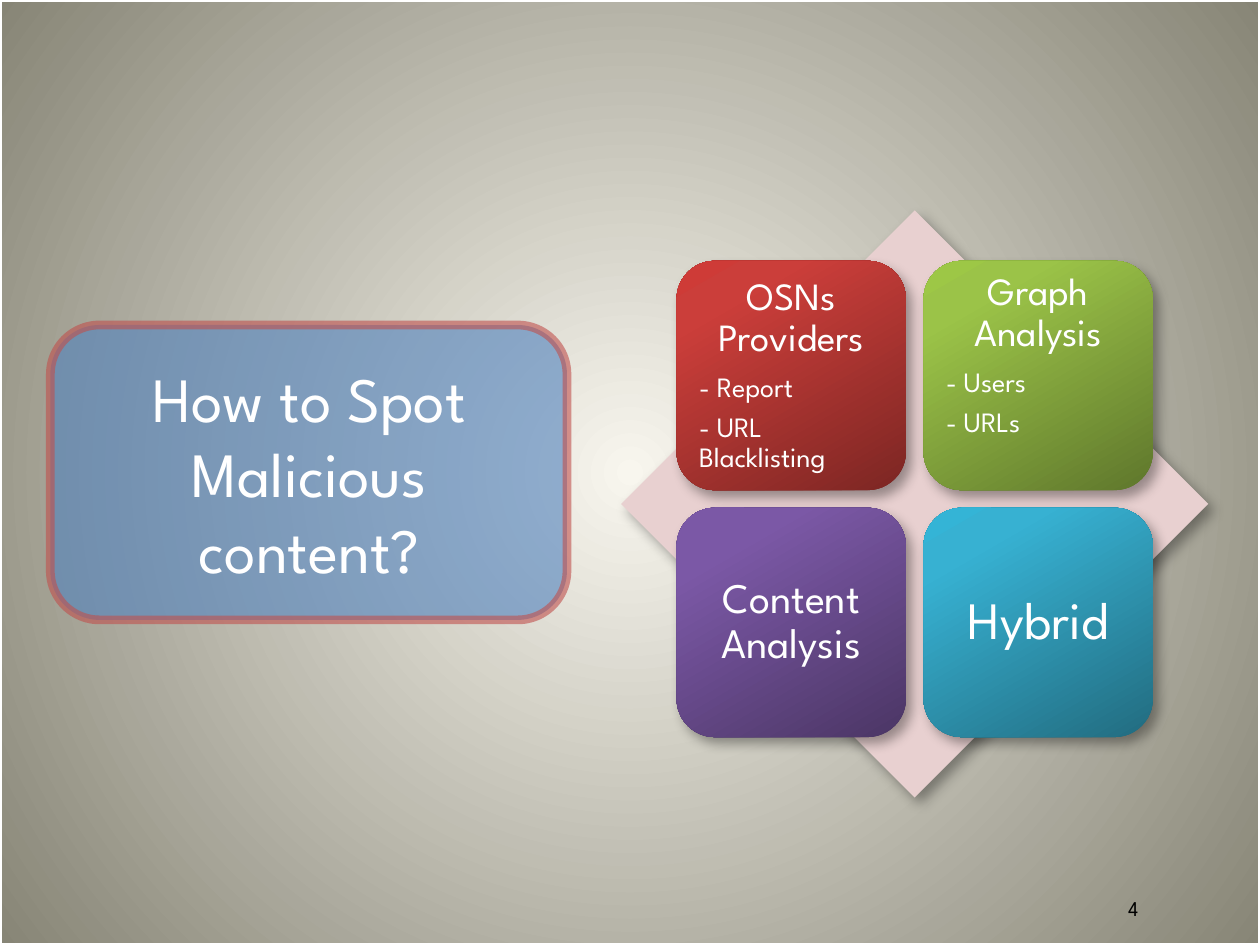
from pptx import Presentation
from pptx.dml.color import RGBColor
from pptx.enum.shapes import MSO_SHAPE
from pptx.enum.text import MSO_ANCHOR, MSO_AUTO_SIZE, PP_ALIGN
from pptx.oxml.ns import qn
from pptx.util import Inches, Pt
from lxml.etree import SubElement

theme = {
    "font": "League Spartan", "white": "FFFFFF", "black": "000000",
    "panel": "4F81BD", "edge": "C0504D", "diamond": "E8D0D0",
    "back": [(0, "F8F6EE"), (100, "878576")],
    "red": [(0, "7C2623"), (80, "CB3E3A"), (100, "CE3B37")],
    "green": [(0, "5F772C"), (80, "9BC348"), (100, "9DC746")],
    "purple": [(0, "4B3665"), (80, "7B58A6"), (100, "7C57A8")],
    "blue": [(0, "226C80"), (80, "37B1D2"), (100, "34B4D6")],
    "title": 36, "item": 16, "number": 12,
}


def blend(node, stops):
    grad = node.find(".//" + qn("a:gradFill"))
    for child in list(grad):
        grad.remove(child)
    group = SubElement(grad, qn("a:gsLst"))
    for place, color in stops:
        stop = SubElement(group, qn("a:gs"), pos=str(place * 1000))
        SubElement(stop, qn("a:srgbClr"), val=color)
    return grad


def write(frame, lines, inset, low, color):
    form = {
        "word_wrap": True, "auto_size": MSO_AUTO_SIZE.NONE,
        "vertical_anchor": MSO_ANCHOR.MIDDLE,
        "margin_left": Inches(inset), "margin_right": Inches(inset),
        "margin_top": Inches(inset), "margin_bottom": Inches(low),
    }
    for key, value in form.items():
        setattr(frame, key, value)
    for index, (text, size, align, space, after) in enumerate(lines):
        para = frame.paragraphs[0] if index == 0 else frame.add_paragraph()
        look = {"alignment": align, "line_spacing": space,
                "space_before": Pt(0), "space_after": Pt(after)}
        for key, value in look.items():
            setattr(para, key, value)
        run = para.add_run()
        run.text = text
        for key, value in {"name": theme["font"], "size": Pt(size), "bold": False}.items():
            setattr(run.font, key, value)
        run.font.color.rgb = RGBColor.from_string(color)


deck = Presentation()
deck.slide_width, deck.slide_height = Inches(10), Inches(7.5)
slide = deck.slides.add_slide(deck.slide_layouts[5])
slide.background.fill.gradient()
grad = blend(slide.element, theme["back"])
circle = SubElement(grad, qn("a:path"), path="circle")
SubElement(circle, qn("a:fillToRect"), l="50000", t="50000", r="50000", b="50000")

border = slide.shapes.add_shape(MSO_SHAPE.RECTANGLE, 0, 0, deck.slide_width, deck.slide_height)
border.shadow.inherit = False
border.fill.background()
border.line.color.rgb = RGBColor.from_string(theme["white"])
border.line.width = Pt(2)

panel = slide.shapes.add_shape(
    MSO_SHAPE.ROUNDED_RECTANGLE, Inches(0.4), Inches(2.58), Inches(4.1), Inches(2.34))
panel.shadow.inherit = False
panel.fill.solid()
panel.fill.fore_color.rgb = RGBColor.from_string(theme["panel"])
panel.line.color.rgb = RGBColor.from_string(theme["edge"])
panel.line.width = Pt(5)
for color in panel.element.spPr.iter(qn("a:srgbClr")):
    SubElement(color, qn("a:alpha"), val="60000")

title = slide.shapes.title
spot = {"left": 0.58, "top": 2.75, "width": 3.75, "height": 2}
for key, value in spot.items():
    setattr(title, key, Inches(value))
write(title.text_frame,
      [("How to Spot Malicious content?", theme["title"], PP_ALIGN.CENTER, 1, 0)],
      0.1, 0.05, theme["white"])
title.text_frame.margin_top = Inches(0.05)
panel.element.addnext(title.element)

group = slide.shapes.add_group_shape()
diamond = group.shapes.add_shape(
    MSO_SHAPE.DIAMOND, Inches(4.93), Inches(1.67), Inches(4.66), Inches(4.66))
diamond.fill.solid()
diamond.fill.fore_color.rgb = RGBColor.from_string(theme["diamond"])

cards = [
    ("red", "OSNs Providers", 22, ["- Report", "- URL Blacklisting"], 0.09, 0.09),
    ("green", "Graph Analysis", 22, ["- Users", "- URLs"], 0.09, 0.41),
    ("purple", "Content Analysis", 24, [], 0.1, 0.1),
    ("blue", "Hybrid", 30, [], 0.12, 0.12),
]
for index, (hue, head, size, items, inset, low) in enumerate(cards):
    row, col = divmod(index, 2)
    card = group.shapes.add_shape(
        MSO_SHAPE.ROUNDED_RECTANGLE, Inches(5.37 + col * 1.96),
        Inches(2.07 + row * 1.96), Inches(1.82), Inches(1.82))
    card.fill.gradient()
    grad = blend(card.element, theme[hue])
    SubElement(grad, qn("a:lin"), ang=str(240 * 60000), scaled="0")
    lines = [(head, size, PP_ALIGN.CENTER, 0.9, size * 0.35)]
    lines += [(item, theme["item"], PP_ALIGN.LEFT, 0.9, 5.6) for item in items]
    write(card.text_frame, lines, inset, low, theme["white"])

for shape in group.shapes:
    shape.line.fill.background()
    shape.shadow.inherit = False
    effect = shape.element.spPr.find(qn("a:effectLst"))
    shade = SubElement(effect, qn("a:outerShdw"), blurRad=str(Pt(7)), dist=str(Pt(5)),
                       dir=str(50 * 60000), algn="tl", rotWithShape="0")
    color = SubElement(shade, qn("a:srgbClr"), val=theme["black"])
    SubElement(color, qn("a:alpha"), val="35000")

number = slide.shapes.add_textbox(Inches(8.17), Inches(7.08), Inches(1.65), Inches(0.25))
write(number.text_frame, [("4", theme["number"], PP_ALIGN.CENTER, 1, 0)],
      0.05, 0.05, theme["black"])

deck.save("out.pptx")
